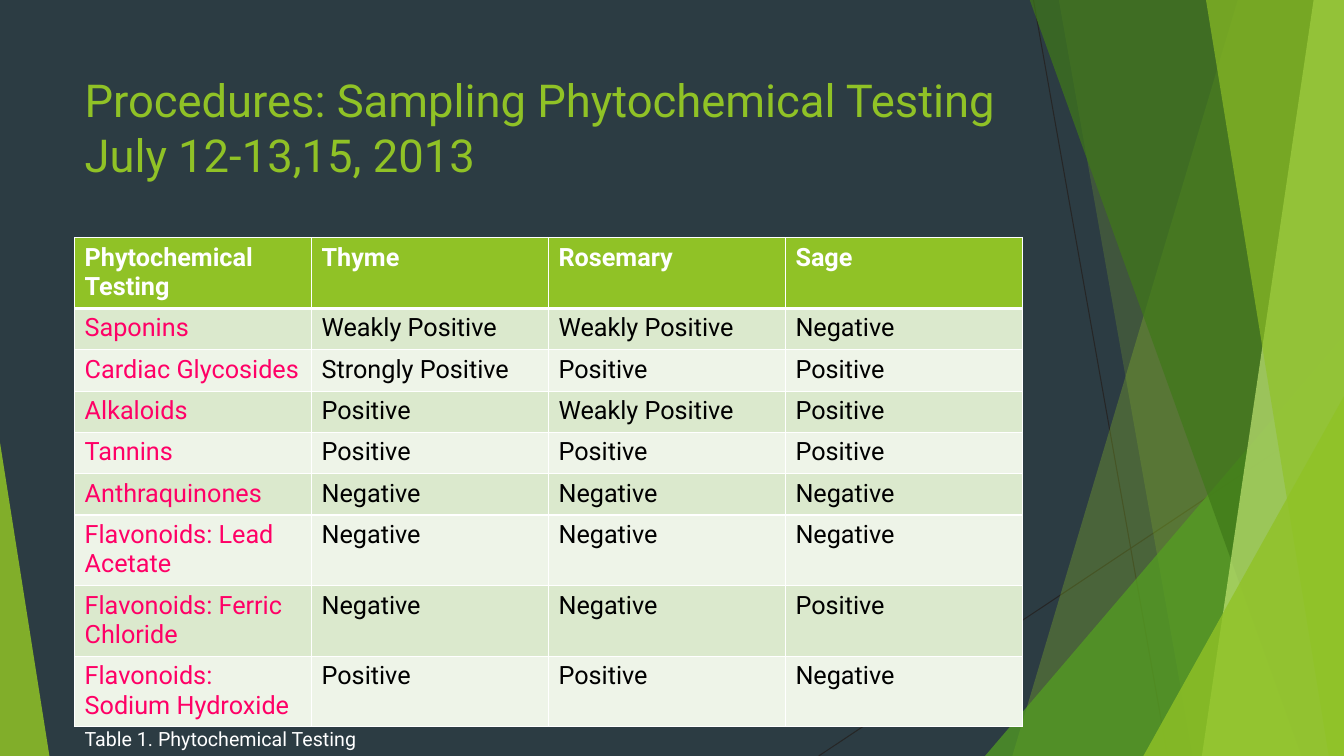
from lxml import etree
from pptx import Presentation
from pptx.dml.color import RGBColor
from pptx.enum.shapes import MSO_CONNECTOR, MSO_SHAPE
from pptx.enum.text import MSO_ANCHOR
from pptx.oxml.ns import qn
from pptx.util import Inches, Pt

STRAIGHT = MSO_CONNECTOR.STRAIGHT
TRIANGLE = MSO_SHAPE.ISOSCELES_TRIANGLE
TOP = MSO_ANCHOR.TOP
WIDTH, HEIGHT = 13.33, 7.5
FONT = "Roboto"
COLORS = {
    "background": "2C3C43", "thin_line": "262626", "lime": "90C226",
    "green": "54A021", "forest": "3F7819", "pale_lime": "C0E474",
    "white": "FFFFFF", "black": "000000", "pink": "FF0066",
    "odd_row": "DBE9CD", "even_row": "EEF4E8",
}
HEADERS = ["Phytochemical Testing", "Thyme", "Rosemary", "Sage"]
RESULTS = [
    ["Saponins", "Weakly Positive", "Weakly Positive", "Negative"],
    ["Cardiac Glycosides", "Strongly Positive", "Positive", "Positive"],
    ["Alkaloids", "Positive", "Weakly Positive", "Positive"],
    ["Tannins", "Positive", "Positive", "Positive"],
    ["Anthraquinones", "Negative", "Negative", "Negative"],
    ["Flavonoids: Lead Acetate", "Negative", "Negative", "Negative"],
    ["Flavonoids: Ferric Chloride", "Negative", "Negative", "Positive"],
    ["Flavonoids: Sodium Hydroxide", "Positive", "Positive", "Negative"],
]


def color(name):
    """Return the named colour."""
    return RGBColor.from_string(COLORS[name])


def write_text(text_frame, text, size=18, color_name="white", bold=False):
    """Write formatted text into a frame, with a line break at each newline."""
    text_frame.word_wrap = True
    paragraph = text_frame.paragraphs[0]
    for index, line in enumerate(text.split("\n")):
        if index:
            paragraph.add_line_break()
        run = paragraph.add_run()
        run.text = line
        run.font.name = FONT
        run.font.size = Pt(size)
        run.font.bold = bold
        run.font.color.rgb = color(color_name)


def add_text(slide, box, text, **text_format):
    """Add a top-anchored text box."""
    text_box = slide.shapes.add_textbox(*map(Inches, box))
    text_box.text_frame.vertical_anchor = TOP
    write_text(text_box.text_frame, text, **text_format)


def paint(shape, color_name, opacity):
    """Fill a shape with a translucent colour and no outline."""
    shape.shadow.inherit = False
    shape.fill.solid()
    shape.fill.fore_color.rgb = color(color_name)
    shape.line.fill.background()
    solid_color = shape.fill._xPr.find(qn("a:solidFill"))[0]
    alpha = etree.SubElement(solid_color, qn("a:alpha"))
    alpha.set("val", str(opacity * 1000))


def add_thin_line(slide, start, end):
    """Add a thin dark line between two points."""
    line = slide.shapes.add_connector(STRAIGHT, *map(Inches, start + end))
    line.line.color.rgb = color("thin_line")
    line.line.width = Pt(0.75)
    etree.SubElement(line._element.spPr, qn("a:effectLst"))


def add_blade(slide, box, top_left, bottom_left, color_name, opacity):
    """Add a band that runs from a slanted left side to the right of its box."""
    left, top, width, height = box
    right, bottom = left + width, top + height
    points = [(top_left, top), (right, top), (right, bottom), (bottom_left, bottom)]
    corners = [(Inches(x), Inches(y)) for x, y in points]
    builder = slide.shapes.build_freeform(*corners[0])
    builder.add_line_segments(corners[1:], close=True)
    paint(builder.convert_to_shape(), color_name, opacity)


def add_corner(slide, box, apex, color_name, opacity):
    """Add a triangle with its apex at a fraction of the width."""
    triangle = slide.shapes.add_shape(TRIANGLE, *map(Inches, box))
    triangle.adjustments[0] = apex
    paint(triangle, color_name, opacity)


def add_facets(slide, box):
    """Draw the overlapping green facets along the edges of the box."""
    left, top, width, height = box
    right, bottom = left + width, top + height

    def blade(top_left, bottom_left, color_name, opacity):
        """Place one full-height blade at the right edge."""
        start = min(top_left, bottom_left)
        blade_box = (start, top - 0.01, right - start, height + 0.01)
        add_blade(slide, blade_box, top_left, bottom_left, color_name, opacity)

    def right_corner(corner_width, corner_height, color_name, opacity):
        """Place one triangle in the bottom right corner."""
        corner_box = (right - corner_width, bottom - corner_height,
                      corner_width, corner_height)
        add_corner(slide, corner_box, 1, color_name, opacity)

    add_thin_line(slide, (10.25, top), (11.58, bottom))
    add_thin_line(slide, (right, 4.03), (8.12, bottom))
    blade(12.28, 10.04, "lime", 30)
    blade(10.5, 11.83, "lime", 20)
    right_corner(3.56, 4.17, "green", 72)
    blade(10.21, 12.91, "forest", 70)
    blade(13.03, 11.92, "pale_lime", 70)
    blade(11.96, 13.18, "lime", 65)
    right_corner(1.99, 3.57, "lime", 80)
    add_corner(slide, (left, bottom - 3.11, 0.49, 3.11), 0, "lime", 85)


def set_borders(cell, bottom_width, top_width):
    """Draw white borders around a cell."""
    properties = cell._tc.get_or_add_tcPr()
    sides = {"lnL": 1, "lnR": 1, "lnT": top_width, "lnB": bottom_width}
    for index, (side, width) in enumerate(sides.items()):
        border = etree.Element(qn(f"a:{side}"), w=str(Pt(width)))
        fill = etree.SubElement(border, qn("a:solidFill"))
        etree.SubElement(fill, qn("a:srgbClr"), val=COLORS["white"])
        properties.insert(index, border)


def add_results_table(slide, box):
    """Add the table of test results, with taller rows for two-line labels."""
    rows = [HEADERS] + RESULTS
    frame = slide.shapes.add_table(len(rows), len(HEADERS), *map(Inches, box))
    table = frame.table
    for column in table.columns:
        column.width = Inches(box[2] / len(HEADERS))
    for row_index, values in enumerate(rows):
        is_header = row_index == 0
        table.rows[row_index].height = Inches(0.69 if len(values[0]) > 20 else 0.41)
        row_fill = "lime" if is_header else "odd_row" if row_index % 2 else "even_row"
        for column_index, value in enumerate(values):
            cell = table.cell(row_index, column_index)
            cell.fill.solid()
            cell.fill.fore_color.rgb = color(row_fill)
            body_color = "black" if column_index else "pink"
            write_text(cell.text_frame, value, bold=is_header,
                       color_name="white" if is_header else body_color)
            set_borders(cell, 3 if is_header else 1, 3 if row_index == 1 else 1)


def build_slide(presentation):
    """Build the phytochemical testing slide."""
    slide = presentation.slides.add_slide(presentation.slide_layouts[6])
    slide.background.fill.solid()
    slide.background.fill.fore_color.rgb = color("background")
    add_facets(slide, (0, 0, WIDTH, HEIGHT))
    add_text(slide, (0.74, 0.67, 9.4, 1.44),
             "Procedures: Sampling Phytochemical Testing\nJuly 12-13,15, 2013",
             size=32.4, color_name="lime")
    add_results_table(slide, (0.74, 2.36, 9.4, 4.83))
    add_text(slide, (0.74, 7.16, 4.02, 0.34), "Table 1. Phytochemical Testing", size=14)


def main():
    """Create and save the presentation."""
    presentation = Presentation()
    presentation.slide_width = Inches(WIDTH)
    presentation.slide_height = Inches(HEIGHT)
    build_slide(presentation)
    presentation.save("out.pptx")


if __name__ == "__main__":
    main()
